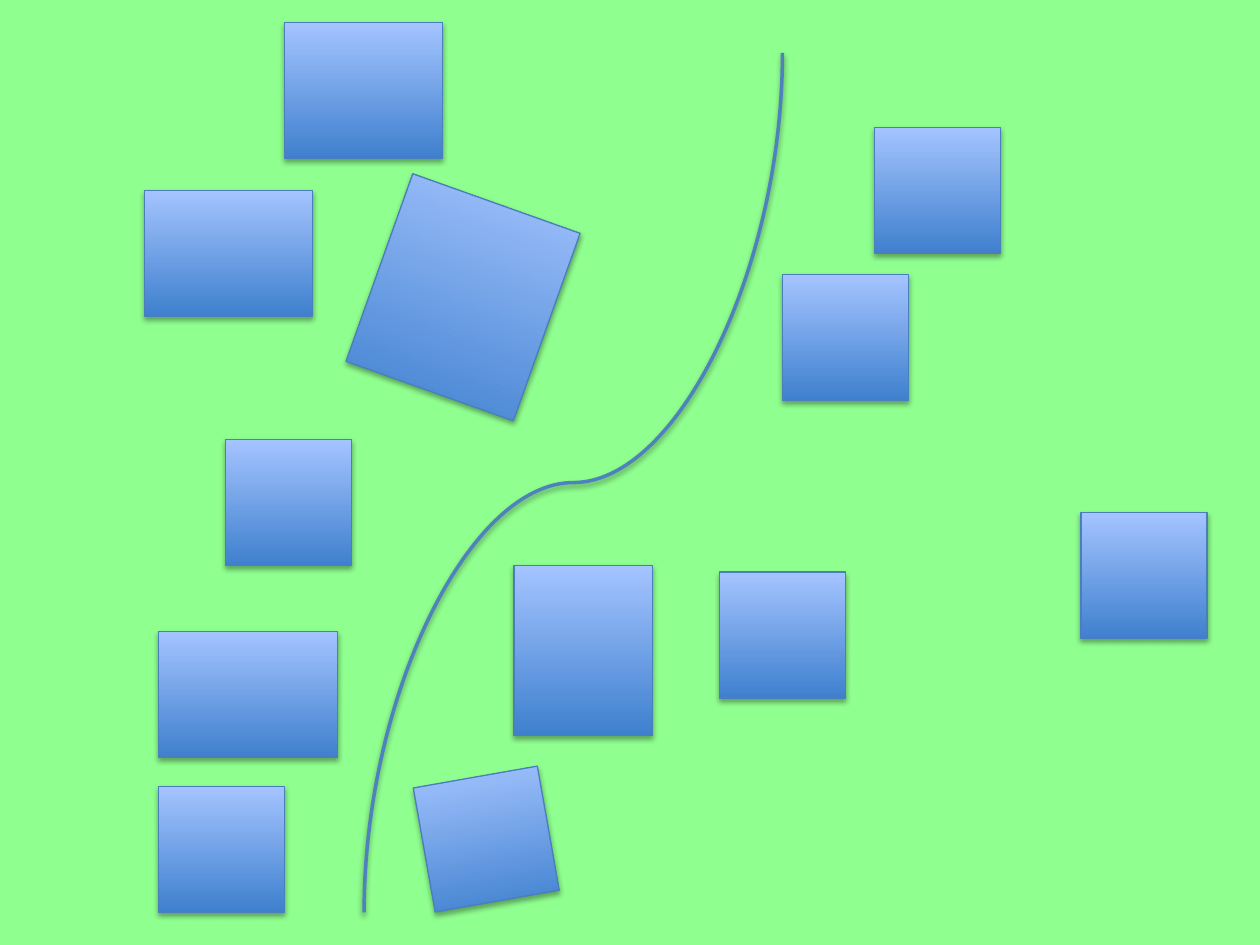
from lxml.etree import SubElement
from pptx import Presentation
from pptx.dml.color import RGBColor as Rgb
from pptx.enum.shapes import MSO_CONNECTOR as Connector, MSO_SHAPE as Shape
from pptx.oxml.ns import qn
from pptx.util import Inches, Pt

THEME = {
    "background": "8FFF8F",
    "block_stops": ("3F80CE", "A4C4FF"),
    "block_edge": "4B7EBC",
    "river": "4F81BD",
    "shadow": "000000",
}
COLUMNS, ROWS = 10, 7.5

deck = Presentation()
deck.slide_width, deck.slide_height = Inches(10), Inches(7.5)
column, row = deck.slide_width / COLUMNS, deck.slide_height / ROWS
slide = deck.slides.add_slide(deck.slide_layouts[6])
slide.background.fill.solid()
slide.background.fill.fore_color.rgb = Rgb.from_string(THEME["background"])


def add_shadow(effects, distance, opacity):
    shadow = SubElement(effects, qn("a:outerShdw"), blurRad=str(Pt(3.1)),
                        dist=str(Pt(distance)), dir="5400000", rotWithShape="0")
    color = SubElement(shadow, qn("a:srgbClr"), val=THEME["shadow"])
    SubElement(color, qn("a:alpha"), val=str(opacity * 1000))


def add_block(left, top, width=1, height=1, turn=0):
    block = slide.shapes.add_shape(
        Shape.RECTANGLE, round(left * column), round(top * row),
        round(width * column), round(height * row))
    block.rotation = turn
    block.fill.gradient()
    block.fill.gradient_angle = 90
    for stop, color in zip(block.fill.gradient_stops, THEME["block_stops"]):
        stop.color.rgb = Rgb.from_string(color)
    block.line.color.rgb = Rgb.from_string(THEME["block_edge"])
    block.line.width = Pt(0.75)
    block.shadow.inherit = False
    add_shadow(block._element.spPr.find(qn("a:effectLst")), 1.8, 35)


for placement in (
    (5.71, 4.54),
    (6.21, 2.18),
    (2.97, 1.57, 1.41, 1.58, 19.6),
    (6.94, 1.01),
    (1.26, 6.24),
    (3.36, 6.16, 1, 1, 350),
    (1.26, 5.01, 1.42),
    (1.79, 3.49),
    (1.15, 1.51, 1.33),
    (8.58, 4.07),
    (2.26, 0.18, 1.25, 1.08),
):
    add_block(*placement)

river = slide.shapes.add_connector(
    Connector.CURVE, round(1.14 * column), round(2.17 * row),
    round(7.96 * column), round(5.49 * row))
river.line.color.rgb = Rgb.from_string(THEME["river"])
river.line.width = Pt(2)
river_properties = river._element.spPr
river_properties.find(qn("a:xfrm")).set("rot", "5400000")
add_shadow(SubElement(river_properties, qn("a:effectLst")), 1.6, 38)

add_block(4.08, 4.49, 1.1, 1.35)

deck.save("out.pptx")
